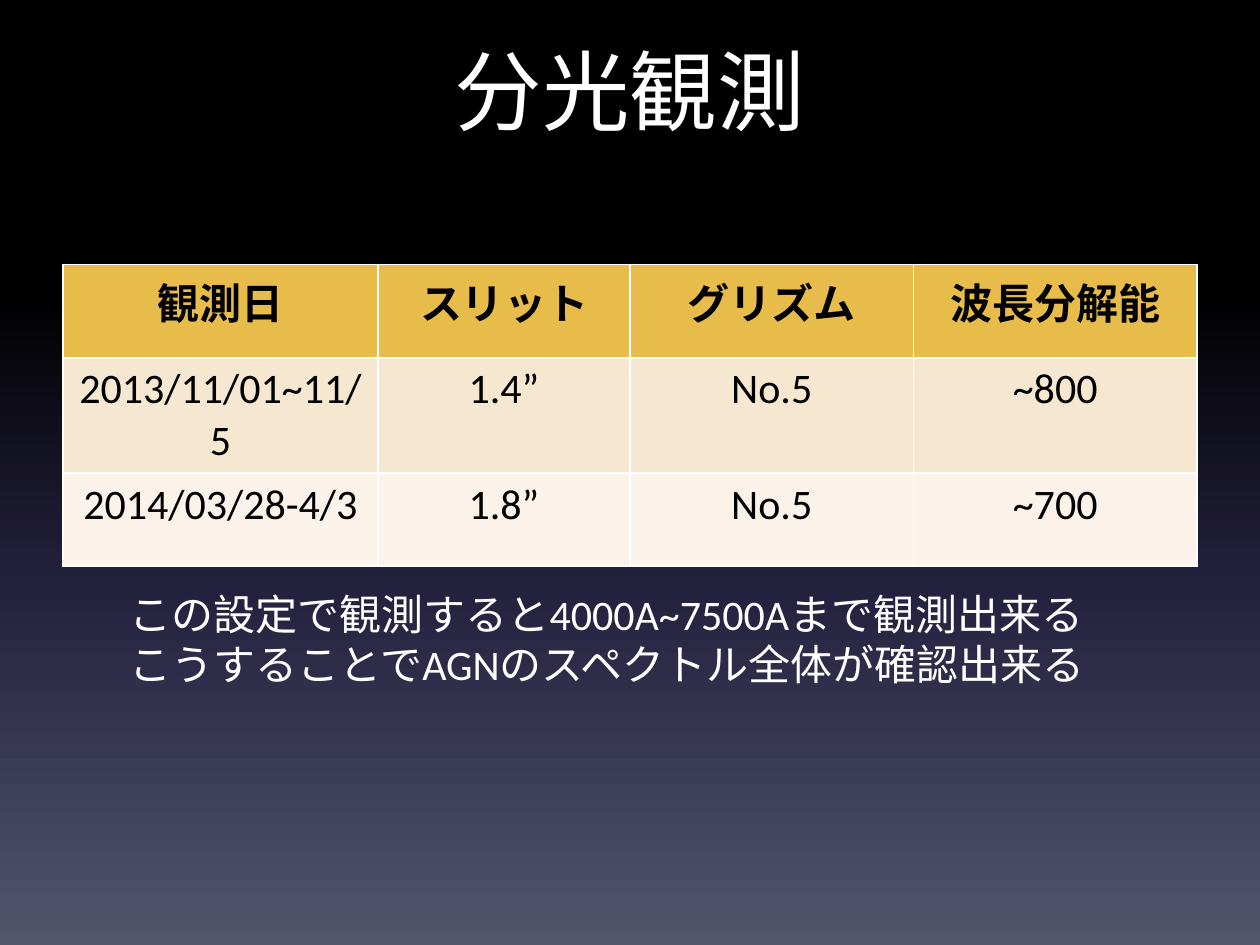
import copy

import pptx
import pptx.util
import pptx.dml.color
import pptx.enum.text
import pptx.oxml.ns

Inches, Pt = pptx.util.Inches, pptx.util.Pt
RGB = pptx.dml.color.RGBColor
PP_ALIGN = pptx.enum.text.PP_ALIGN
ANCHOR = pptx.enum.text.MSO_ANCHOR
qn = pptx.oxml.ns.qn

# Content
TITLE = "分光観測"
ROWS = [
    ("観測日", "スリット", "グリズム", "波長分解能"),
    ("2013/11/01~11/5", "1.4”", "No.5", "~800"),
    ("2014/03/28-4/3", "1.8”", "No.5", "~700"),
]
NOTES = [
    "この設定で観測すると4000A~7500Aまで観測出来る",
    "こうすることでAGNのスペクトル全体が確認出来る",
]

# Style
FONT = "Calibri"
WHITE = RGB(0xFF, 0xFF, 0xFF)
BLACK = RGB(0x00, 0x00, 0x00)
ROW_FILLS = [RGB(0xE8, 0xBC, 0x4A), RGB(0xF6, 0xE7, 0xD0), RGB(0xFB, 0xF3, 0xE9)]
BACKGROUND = [(0, BLACK), (0.31, BLACK),
              (0.62, RGB(0x24, 0x21, 0x3E)), (1, RGB(0x51, 0x56, 0x6D))]

# Layout in inches
MARGIN = 0.5
COLS = [2.5, 2, 2.25, 2.25]
ROW_H = 0.74
WIDTH = sum(COLS)


def format_text(tf, size, color, align, bold=False):
    for p in tf.paragraphs:
        p.alignment = align
        for r in p.runs:
            r.font.name = FONT
            r.font.size = Pt(size)
            r.font.bold = bold
            r.font.color.rgb = color


prs = pptx.Presentation()
prs.slide_width, prs.slide_height = Inches(10), Inches(7.5)
s = prs.slides.add_slide(prs.slide_layouts[5])

# Background gradient, top to bottom
fill = s.background.fill
fill.gradient()
fill.gradient_angle = 270
stops = s.element.find(".//" + qn("a:gsLst"))
for _ in range(len(BACKGROUND) - len(stops)):
    stops.append(copy.deepcopy(stops[0]))
for stop, (position, color) in zip(fill.gradient_stops, BACKGROUND):
    stop.position = position
    stop.color.rgb = color

# Title
title = s.shapes.title
title.left, title.top = Inches(MARGIN), Inches(0.24)
title.width, title.height = Inches(WIDTH), Inches(1.25)
tf = title.text_frame
tf.text = TITLE
tf.vertical_anchor = ANCHOR.TOP
format_text(tf, 50, WHITE, PP_ALIGN.CENTER)

# Observation table
table = s.shapes.add_table(len(ROWS), len(COLS), Inches(MARGIN), Inches(2.1),
                           Inches(WIDTH), Inches(ROW_H * len(ROWS))).table
for column, width in zip(table.columns, COLS):
    column.width = Inches(width)
for i, (row, color) in enumerate(zip(ROWS, ROW_FILLS)):
    for j, text in enumerate(row):
        cell = table.cell(i, j)
        cell.fill.solid()
        cell.fill.fore_color.rgb = color
        cell.text_frame.text = text
        format_text(cell.text_frame, 24, BLACK, PP_ALIGN.CENTER, bold=i == 0)

# Remarks below the table
sp = s.shapes.add_textbox(Inches(0.93), Inches(4.62), Inches(7.88), Inches(0.91))
tf = sp.text_frame
tf.word_wrap = True
tf.text = "\n".join(NOTES)
format_text(tf, 24, WHITE, PP_ALIGN.LEFT)

prs.save("out.pptx")
